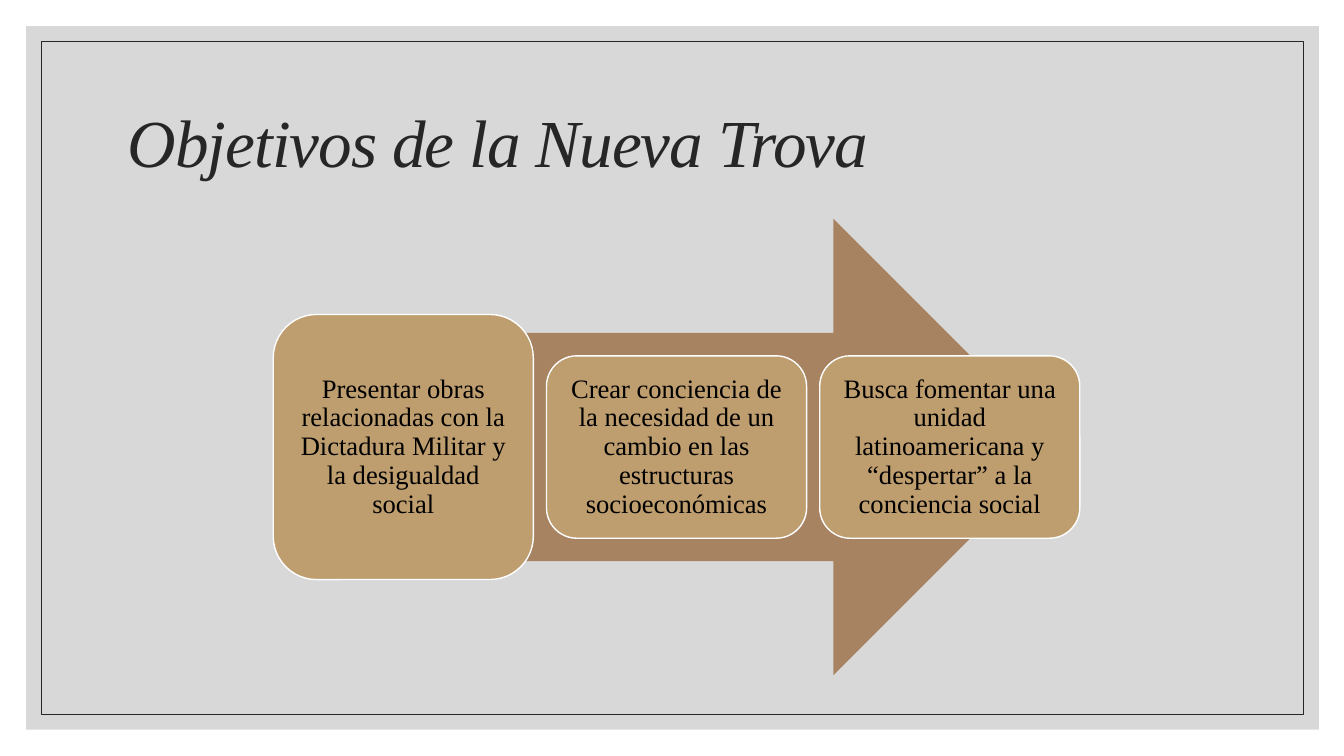
import dataclasses

import pptx
import pptx.dml.color
import pptx.enum.shapes
import pptx.enum.text
import pptx.oxml
import pptx.oxml.ns
import pptx.util

Inches = pptx.util.Inches
Pt = pptx.util.Pt
SHAPES = pptx.enum.shapes.MSO_SHAPE
ALIGN = pptx.enum.text.PP_ALIGN


@dataclasses.dataclass(frozen=True)
class Theme:
    font: str = "Times New Roman"
    panel: str = "BFBFBF"
    ink: str = "262626"
    arrow: str = "A88361"
    card: str = "BE9D6E"
    card_edge: str = "FFFFFF"
    card_ink: str = "000000"
    title_size: float = 48
    card_size: float = 19


THEME = Theme()
SLIDE_W, SLIDE_H = 13.33, 7.5
OBJECTIVES = [
    ("Presentar obras relacionadas con la Dictadura Militar y la desigualdad social", 2.63),
    ("Crear conciencia de la necesidad de un cambio en las estructuras socioeconómicas", 1.81),
    ("Busca fomentar una unidad latinoamericana y “despertar” a la conciencia social", 1.81),
]


def rgb(code):
    return pptx.dml.color.RGBColor.from_string(code)


def add_block(slide, preset, box, fill=None, edge=None, weight=1):
    block = slide.shapes.add_shape(preset, *map(Inches, box))
    block.shadow.inherit = False
    if fill:
        block.fill.solid()
        block.fill.fore_color.rgb = rgb(fill)
    else:
        block.fill.background()
    if edge:
        block.line.color.rgb = rgb(edge)
        block.line.width = Pt(weight)
    else:
        block.line.fill.background()
    return block


def write(holder, text, size, color, align, inset=None, italic=False):
    frame = holder.text_frame
    frame.word_wrap = True
    frame.vertical_anchor = pptx.enum.text.MSO_ANCHOR.MIDDLE
    if inset is not None:
        for side in ("left", "top", "right", "bottom"):
            setattr(frame, f"margin_{side}", Inches(inset))
    paragraph = frame.paragraphs[0]
    paragraph.alignment = align
    paragraph.line_spacing = 0.9
    run = paragraph.add_run()
    run.text = text
    run.font.color.rgb = rgb(color)
    formats = {"name": THEME.font, "size": Pt(size), "italic": italic}
    for attribute, value in formats.items():
        setattr(run.font, attribute, value)
    return run


def add_backdrop(slide, box):
    left, top, width, height = box
    panel = add_block(slide, SHAPES.RECTANGLE, box, fill=THEME.panel)
    # Translucent panel fill
    color = panel.fill._xPr.find(".//" + pptx.oxml.ns.qn("a:srgbClr"))
    color.append(pptx.oxml.parse_xml(
        f'<a:alpha {pptx.oxml.ns.nsdecls("a")} val="60000"/>'))
    # Thin frame inside the panel
    inset = 0.15
    frame_box = (left + inset, top + inset, width - 2 * inset, height - 2 * inset)
    add_block(slide, SHAPES.RECTANGLE, frame_box, edge=THEME.ink, weight=0.5)


def add_title(slide, box, text):
    title = slide.shapes.add_textbox(*map(Inches, box))
    run = write(title, text, THEME.title_size, THEME.ink, ALIGN.LEFT, italic=True)
    run._r.get_or_add_rPr().set("spc", "-70")


def add_process(slide, box, objectives):
    left, top, width, height = box
    # Arrow behind the cards
    margin = 0.18
    add_block(slide, SHAPES.RIGHT_ARROW,
              (left + margin, top, width - 2 * margin, height), fill=THEME.arrow)
    # Evenly spaced cards, centred on the arrow
    gap = 0.13
    card_width = (width - gap * (len(objectives) - 1)) / len(objectives)
    for index, (objective, card_height) in enumerate(objectives):
        card_box = (left + index * (card_width + gap),
                    top + (height - card_height) / 2, card_width, card_height)
        card = add_block(slide, SHAPES.ROUNDED_RECTANGLE, card_box,
                         fill=THEME.card, edge=THEME.card_edge)
        write(card, objective, THEME.card_size, THEME.card_ink, ALIGN.CENTER, inset=0.08)


def main():
    deck = pptx.Presentation()
    deck.slide_width, deck.slide_height = Inches(SLIDE_W), Inches(SLIDE_H)
    slide = deck.slides.add_slide(deck.slide_layouts[6])
    add_backdrop(slide, (0.26, 0.26, 12.82, 6.98))
    add_title(slide, (1.17, 0.7, 11, 1.5), "Objetivos de la Nueva Trova")
    add_process(slide, (2.71, 2.17, 8, 4.53), OBJECTIVES)
    deck.save("out.pptx")


if __name__ == "__main__":
    main()
